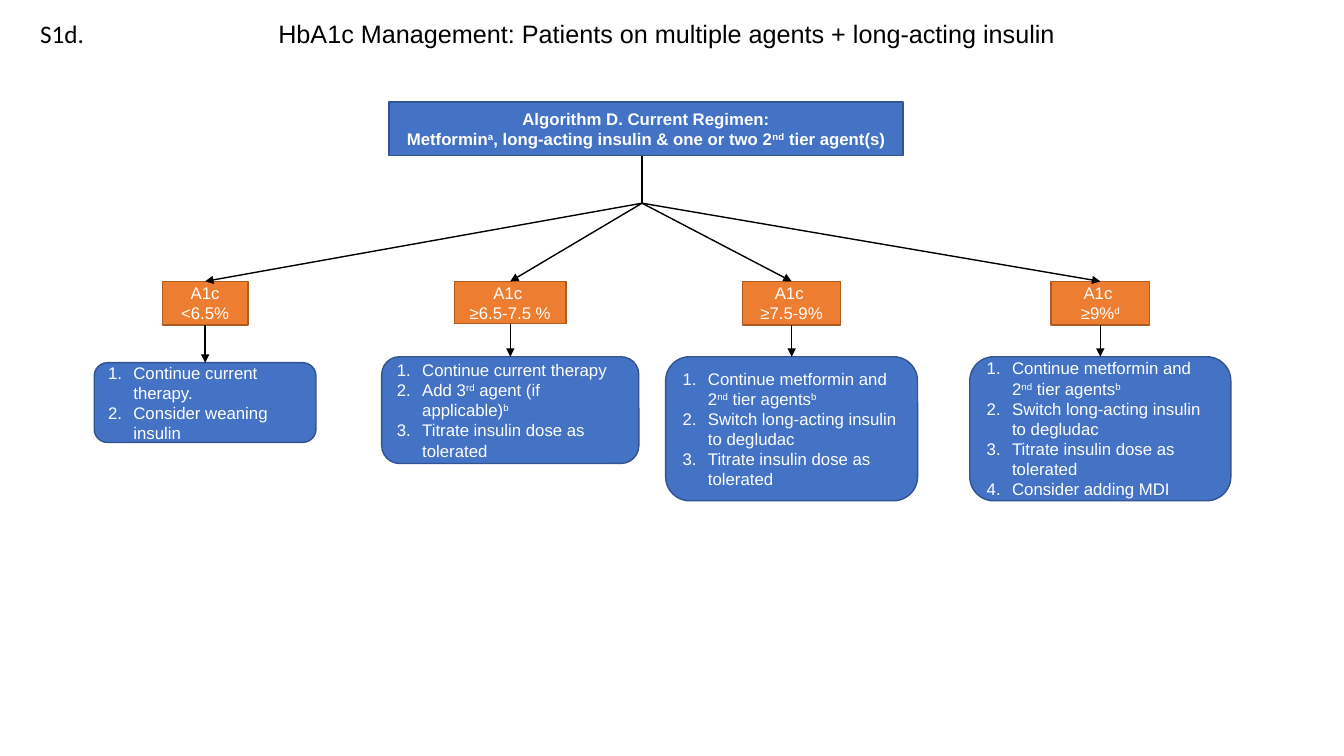
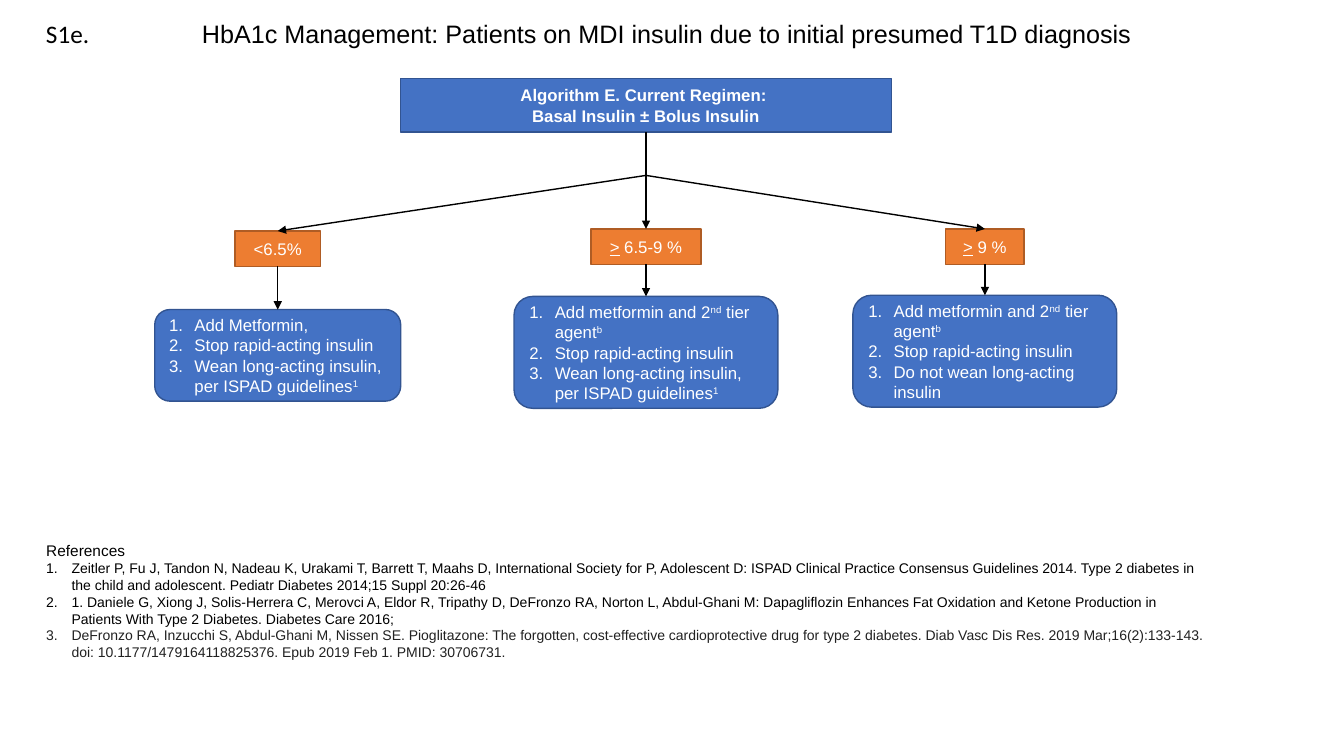
from lxml.etree import SubElement
from pptx import Presentation
from pptx.dml.color import RGBColor
from pptx.enum.shapes import MSO_CONNECTOR as CONNECTOR, MSO_SHAPE as SHAPE
from pptx.enum.text import MSO_ANCHOR as ANCHOR, MSO_AUTO_SIZE as AUTO_SIZE, PP_ALIGN as ALIGN
from pptx.oxml.ns import qn
from pptx.util import Cm, Pt

BLUE = RGBColor(0x44, 0x72, 0xC4)
BLUE_EDGE = RGBColor(0x32, 0x54, 0x91)
ORANGE = RGBColor(0xED, 0x7D, 0x31)
ORANGE_EDGE = RGBColor(0xAF, 0x5C, 0x24)
WHITE = RGBColor(0xFF, 0xFF, 0xFF)
BLACK = RGBColor(0, 0, 0)
INK = RGBColor(0x21, 0x21, 0x21)

MIDDLE = 16.28      # centre of the regimen boxes
TITLE_MIDDLE = 16.8
INDENT = Cm(0.64)

# All lengths are in cm. In texts, ^...^ is superscript and _..._ underlined.
# Branch: centre, tag (top, width, height, lines), box (top, width, height, steps)
TIER_STEPS = ["Continue metformin and 2^nd^ tier agents^b^",
              "Switch long-acting insulin to degludac",
              "Titrate insulin dose as tolerated"]
STOP_RAPID = "Stop rapid-acting insulin"
WEAN_LONG = "Wean long-acting insulin, per ISPAD guidelines^1^"
ADD_TIER = "Add metformin and 2^nd^ tier agent^b^"

CHARTS = [
    {
        "label": "S1d.", "label_left": 0.76, "title_width": 20.27,
        "title": "HbA1c Management: Patients on multiple agents + long-acting insulin",
        "regimen": ["Algorithm D. Current Regimen:",
                    "Metformin^a^, long-acting insulin & one or two 2^nd^ tier agent(s)"],
        "regimen_top": 2.57, "regimen_width": 12.95, "hub": (16.18, 5.12),
        "branches": [
            (5.17, (7.09, 2.16, 1.1, ["A1c <6.5%"]),
             (9.14, 5.59, 2.01, ["Continue current therapy.", "Consider weaning insulin"])),
            (12.86, (7.09, 2.82, 1.07, ["A1c ", "≥6.5-7.5 %"]),
             (8.99, 6.48, 2.69, ["Continue current therapy",
                                 "Add 3^rd^ agent (if applicable)^b^",
                                 "Titrate insulin dose as tolerated"])),
            (19.95, (7.09, 2.48, 1.1, ["A1c ", "≥7.5-9%"]),
             (8.99, 6.35, 3.63, TIER_STEPS)),
            (27.73, (7.09, 2.48, 1.1, ["A1c ", "≥9%^d^"]),
             (8.99, 6.58, 3.63, TIER_STEPS + ["Consider adding MDI"])),
        ],
        "references": [],
    },
    {
        "label": "S1e.", "label_left": 0.91, "title_width": 24.16,
        "title": "HbA1c Management: Patients on MDI insulin due to initial presumed T1D diagnosis",
        "regimen": ["Algorithm E. Current Regimen: ", "Basal Insulin ± Bolus Insulin"],
        "regimen_top": 1.98, "regimen_width": 12.37, "hub": (MIDDLE, 4.42),
        "branches": [
            (7.0, (5.82, 2.16, 0.89, ["<6.5%"]),
             (7.8, 6.2, 2.31, ["Add Metformin,", STOP_RAPID, WEAN_LONG])),
            (MIDDLE, (5.77, 2.77, 0.89, ["_>_ 6.5-9 %"]),
             (7.47, 6.65, 2.82, [ADD_TIER, STOP_RAPID, WEAN_LONG])),
            (24.82, (5.77, 1.98, 0.89, ["_>_ 9 %"]),
             (7.44, 6.65, 2.82, [ADD_TIER, STOP_RAPID, "Do not wean long-acting insulin"])),
        ],
        "references": [
            "References",
            "Zeitler P, Fu J, Tandon N, Nadeau K, Urakami T, Barrett T, Maahs D, "
            "International Society for P, Adolescent D: ISPAD Clinical Practice Consensus "
            "Guidelines 2014. Type 2 diabetes in the child and adolescent. "
            "Pediatr Diabetes 2014;15 Suppl 20:26-46",
            "1. Daniele G, Xiong J, Solis-Herrera C, Merovci A, Eldor R, Tripathy D, "
            "DeFronzo RA, Norton L, Abdul-Ghani M: Dapagliflozin Enhances Fat Oxidation and "
            "Ketone Production in Patients With Type 2 Diabetes. Diabetes Care 2016;",
            "DeFronzo RA, Inzucchi S, Abdul-Ghani M, Nissen SE. Pioglitazone: The forgotten, "
            "cost-effective cardioprotective drug for type 2 diabetes. Diab Vasc Dis Res. "
            "2019 Mar;16(2):133-143. doi: 10.1177/1479164118825376. Epub 2019 Feb 1. "
            "PMID: 30706731.",
        ],
    },
]


def write(box, lines, size=12, color=WHITE, font="Arial", bold=False,
          align=ALIGN.CENTER, numbered_from=None):
    """Fill a box with marked-up lines, numbering those from the given index on."""
    frame = box.text_frame
    for index, line in enumerate(lines):
        para = frame.paragraphs[0] if index == 0 else frame.add_paragraph()
        para.alignment = align
        para.space_before = Pt(0)
        props = para._p.get_or_add_pPr()
        numbered = numbered_from is not None and index >= numbered_from
        props.set("marL", str(INDENT if numbered else 0))
        props.set("indent", str(-INDENT if numbered else 0))
        if numbered:
            SubElement(props, qn("a:buAutoNum"), type="arabicPeriod")
        else:
            SubElement(props, qn("a:buNone"))
        for u, piece in enumerate(line.split("_")):
            for s, text in enumerate(piece.split("^")):
                if not text:
                    continue
                span = para.add_run()
                span.text = text
                span.font.size = Pt(size)
                span.font.name = font
                span.font.bold = bold
                span.font.color.rgb = color
                if u % 2:
                    span.font.underline = True
                if s % 2:
                    span.font._element.set("baseline", "30000")


def connect(page, start, end, arrow=True):
    """Draw a black line between two points given in cm."""
    line = page.shapes.add_connector(CONNECTOR.STRAIGHT, *map(Cm, start + end))
    line.line.color.rgb = BLACK
    line.line.width = Pt(1)
    props = line._element.spPr
    if arrow:
        SubElement(props.find(qn("a:ln")), qn("a:tailEnd"), type="triangle")
    SubElement(props, qn("a:effectLst"))


deck = Presentation()
deck.slide_width, deck.slide_height = Cm(33.87), Cm(19.05)

for chart in CHARTS:
    # Title and figure label
    references = chart["references"]
    page = deck.slides.add_slide(deck.slide_layouts[1 if references else 5])
    title = page.shapes.title
    width = chart["title_width"]
    title.left, title.top = Cm(TITLE_MIDDLE - width / 2), Cm(0.33)
    title.width, title.height = Cm(width), Cm(1.02)
    title.text_frame.word_wrap = False
    title.text_frame.auto_size = AUTO_SIZE.NONE
    write(title, [chart["title"]], size=18, color=BLACK)
    label = page.shapes.add_textbox(Cm(chart["label_left"]), Cm(0.33), Cm(2.01), Cm(1.02))
    label.text_frame.word_wrap = True
    write(label, [chart["label"]], size=18, color=BLACK, font="Calibri", align=ALIGN.LEFT)

    # Boxes: the regimen, then a tag and a numbered list per branch
    top, hub = chart["regimen_top"], chart["hub"]
    boxes = [(SHAPE.RECTANGLE, BLUE, BLUE_EDGE, MIDDLE,
              (top, chart["regimen_width"], 1.35, chart["regimen"]))]
    for centre, tag, steps in chart["branches"]:
        boxes.append((SHAPE.RECTANGLE, ORANGE, ORANGE_EDGE, centre, tag))
        boxes.append((SHAPE.ROUNDED_RECTANGLE, BLUE, BLUE_EDGE, centre, steps))
    for kind, fill, edge, centre, (box_top, width, height, lines) in boxes:
        box = page.shapes.add_shape(kind, Cm(centre - width / 2), Cm(box_top),
                                    Cm(width), Cm(height))
        box.shadow.inherit = False
        box.fill.solid()
        box.fill.fore_color.rgb = fill
        box.line.color.rgb = edge
        box.line.width = Pt(1)
        box.text_frame.vertical_anchor = ANCHOR.MIDDLE
        if kind == SHAPE.ROUNDED_RECTANGLE:
            write(box, lines, align=ALIGN.LEFT, numbered_from=0)
        else:
            write(box, lines, bold=fill == BLUE)

    # Lines from the regimen through the hub to each branch
    connect(page, (hub[0], top + 1.35), hub, arrow=False)
    for centre, tag, steps in chart["branches"]:
        connect(page, hub, (centre, tag[0]))
        connect(page, (centre, tag[0] + tag[2]), (centre, steps[0]))

    # References
    if references:
        body = page.placeholders[1]
        body.left, body.top, body.width, body.height = Cm(0.91), Cm(13.51), Cm(29.77), Cm(4.32)
        body.text_frame.auto_size = AUTO_SIZE.NONE
        write(body, references, size=10, color=BLACK, align=ALIGN.LEFT, numbered_from=1)
        paras = body.text_frame.paragraphs
        paras[0].runs[0].font.size = Pt(11)
        paras[-1].runs[0].font.color.rgb = INK

deck.save("out.pptx")
